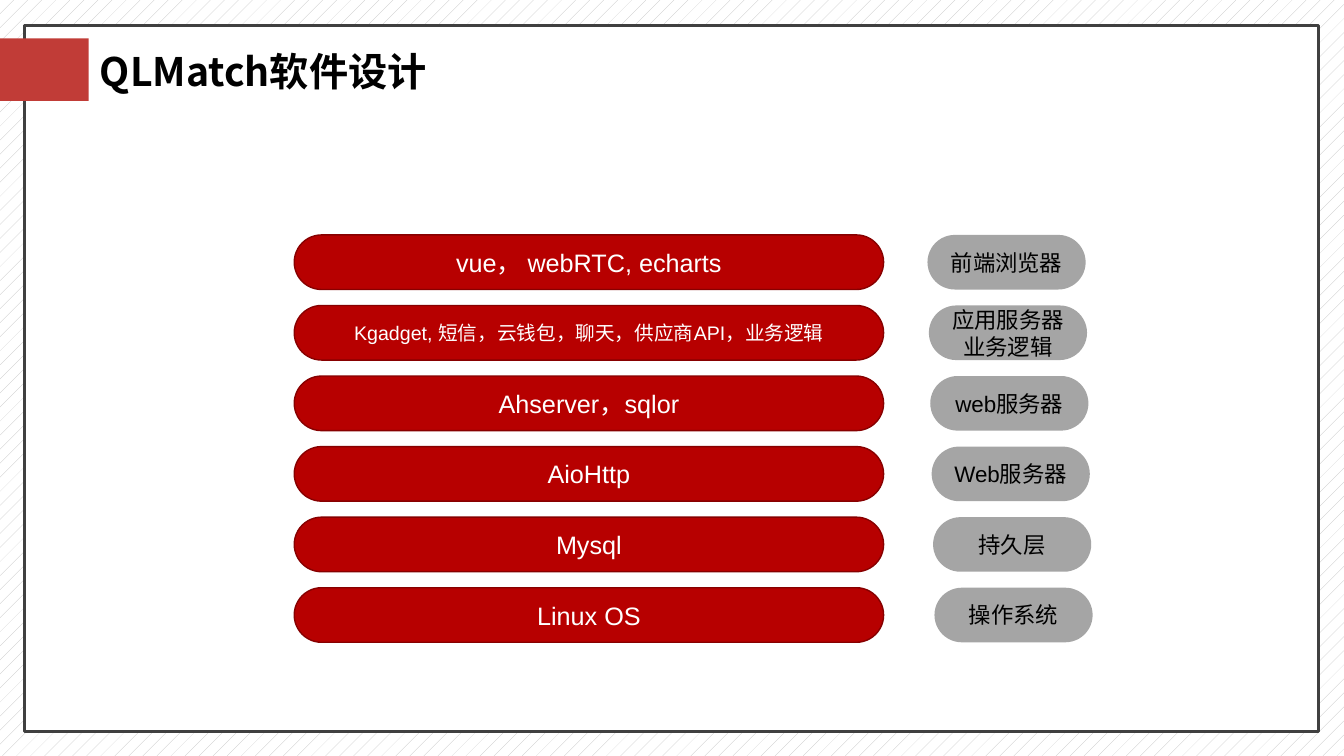
from dataclasses import dataclass

from lxml.etree import SubElement
from pptx import Presentation
from pptx.dml.color import RGBColor
from pptx.enum.dml import MSO_PATTERN
from pptx.enum.shapes import MSO_SHAPE
from pptx.enum.text import MSO_ANCHOR, PP_ALIGN
from pptx.oxml.ns import qn
from pptx.shapes.autoshape import Shape
from pptx.slide import Slide
from pptx.text.text import TextFrame
from pptx.util import Pt

CJK_FONT = "Noto Sans CJK SC"
FIRST_TOP, ROW_PITCH, ROW_HEIGHT = 167.8, 50.4, 39
LAYER_LEFT, LAYER_WIDTH = 210.2, 421
ROLE_LEFT, ROLE_WIDTH, ROLE_SHIFT = 662.5, 113, 1


@dataclass
class Layer:
    software: str
    role: str
    size: float = 18


LAYERS = [
    Layer("vue， webRTC, echarts", "前端浏览器"),
    Layer("Kgadget, 短信，云钱包，聊天，供应商API，业务逻辑", "应用服务器\n业务逻辑", 14),
    Layer("Ahserver，sqlor", "web服务器"),
    Layer("AioHttp", "Web服务器"),
    Layer("Mysql", "持久层"),
    Layer("Linux OS", "操作系统"),
]


def color(value: str) -> RGBColor:
    return RGBColor.from_string(value)


def add_box(slide: Slide, kind: MSO_SHAPE, left: float, top: float, width: float,
            height: float, fill: str, line: str = "", line_width: float = 1) -> Shape:
    """Add a filled shape; without a line colour it has no outline."""
    shape = slide.shapes.add_shape(kind, Pt(left), Pt(top), Pt(width), Pt(height))
    shape.shadow.inherit = False
    shape.fill.solid()
    shape.fill.fore_color.rgb = color(fill)
    if line:
        shape.line.color.rgb = color(line)
        shape.line.width = Pt(line_width)
    else:
        shape.line.fill.background()
    return shape


def write(frame: TextFrame, text: str, size: float, font: str, text_color: str,
          alignment: PP_ALIGN, anchor: MSO_ANCHOR, bold: bool = False) -> None:
    frame.text = text
    frame.word_wrap = True
    frame.vertical_anchor = anchor
    for paragraph in frame.paragraphs:
        paragraph.alignment = alignment
        for run in paragraph.runs:
            run.font.size = Pt(size)
            run.font.name = font
            run.font.bold = bold
            run.font.color.rgb = color(text_color)
            SubElement(run.font._element, qn("a:ea"), typeface=CJK_FONT)


def add_pill(slide: Slide, left: float, top: float, width: float, text: str,
             size: float, text_color: str, fill: str, line: str = "") -> None:
    pill = add_box(slide, MSO_SHAPE.ROUNDED_RECTANGLE, left, top, width, ROW_HEIGHT, fill, line)
    pill.adjustments[0] = 0.5
    write(pill.text_frame, text, size, "Arial", text_color, PP_ALIGN.CENTER, MSO_ANCHOR.MIDDLE)


def add_frame(slide: Slide) -> None:
    """Add the patterned background, the bordered panel and the title tab."""
    background = slide.background.fill
    background.patterned()
    background.pattern = MSO_PATTERN.PERCENT_5
    background.fore_color.rgb = color("BFBFBF")
    background.back_color.rgb = color("FFFFFF")
    add_box(slide, MSO_SHAPE.RECTANGLE, 17.5, 18.2, 924.5, 504.5, "FFFFFF", "404040", 2)
    add_box(slide, MSO_SHAPE.RECTANGLE, -2, 27.4, 65.4, 44.6, "C13C37")


def add_title(slide: Slide, text: str) -> None:
    title = slide.shapes.title
    title.left, title.top, title.width, title.height = Pt(64.2), Pt(30.2), Pt(415.4), Pt(41)
    write(title.text_frame, text, 28, CJK_FONT, "000000", PP_ALIGN.LEFT, MSO_ANCHOR.TOP, True)
    slide.shapes.element.append(title.element)  # bring in front of the panel


def main() -> None:
    presentation = Presentation()
    presentation.slide_width, presentation.slide_height = Pt(960), Pt(540)
    slide = presentation.slides.add_slide(presentation.slide_layouts[5])
    add_frame(slide)
    add_title(slide, "QLMatch软件设计")
    for row, layer in enumerate(LAYERS):
        top = FIRST_TOP + row * ROW_PITCH
        add_pill(slide, LAYER_LEFT, top, LAYER_WIDTH, layer.software, layer.size,
                 "FFFFFF", "B70000", "870000")
        add_pill(slide, ROLE_LEFT + row * ROLE_SHIFT, top, ROLE_WIDTH, layer.role, 16,
                 "000000", "A5A5A5")
    presentation.save("out.pptx")


if __name__ == "__main__":
    main()
